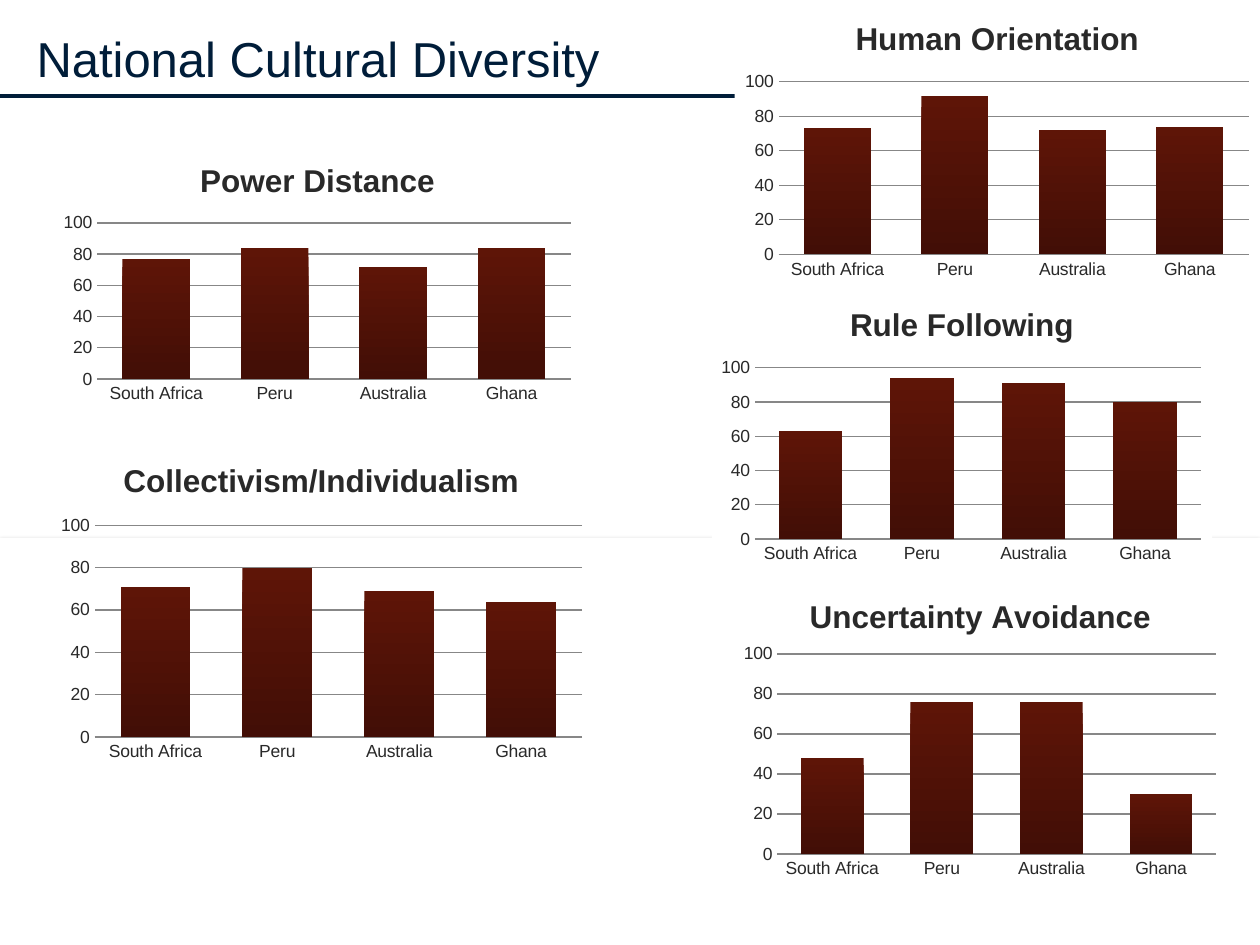
from dataclasses import dataclass

from lxml import etree
from pptx import Presentation
from pptx.chart.data import CategoryChartData
from pptx.dml.color import RGBColor
from pptx.enum.chart import XL_CHART_TYPE, XL_TICK_MARK
from pptx.enum.shapes import MSO_CONNECTOR, MSO_SHAPE
from pptx.enum.text import MSO_ANCHOR
from pptx.oxml import parse_xml
from pptx.oxml.ns import nsdecls, qn
from pptx.util import Inches, Pt

COLUMN = XL_CHART_TYPE.COLUMN_CLUSTERED
NO_TICK = XL_TICK_MARK.NONE
STRAIGHT = MSO_CONNECTOR.STRAIGHT
RECTANGLE = MSO_SHAPE.RECTANGLE
BOTTOM = MSO_ANCHOR.BOTTOM

COUNTRIES = ("South Africa", "Peru", "Australia", "Ghana")


@dataclass(frozen=True)
class Theme:
    font: str = "Arial"
    navy: RGBColor = RGBColor(0x00, 0x1D, 0x39)
    text: RGBColor = RGBColor(0x29, 0x29, 0x29)
    grid: RGBColor = RGBColor(0x87, 0x87, 0x87)
    white: RGBColor = RGBColor(0xFF, 0xFF, 0xFF)
    bar_top: RGBColor = RGBColor(0x5E, 0x15, 0x07)
    bar_bottom: RGBColor = RGBColor(0x42, 0x0E, 0x06)
    title_size: Pt = Pt(28)
    chart_title_size: Pt = Pt(18)
    label_size: Pt = Pt(10)


@dataclass(frozen=True)
class Box:
    left: float
    top: float
    width: float
    height: float

    def emu(self) -> tuple:
        return tuple(Inches(v) for v in (self.left, self.top, self.width, self.height))


@dataclass(frozen=True)
class CultureChart:
    title: str
    values: tuple
    frame: Box
    plot: Box
    opaque: bool = True


THEME = Theme()
CHARTS = (
    CultureChart("Power Distance", (77, 84, 72, 84),
                 Box(0.42, 1.13, 4.2, 2.12), Box(0.77, 1.77, 3.76, 1.24), False),
    CultureChart("Human Orientation", (73, 92, 72, 74),
                 Box(5.83, 0, 4.17, 2.27), Box(6.18, 0.65, 3.73, 1.37)),
    CultureChart("Collectivism/Individualism", (71, 80, 69, 64),
                 Box(0.4, 3.5, 4.3, 2.59), Box(0.75, 4.17, 3.87, 1.68), False),
    CultureChart("Rule Following", (63, 94, 91, 80),
                 Box(5.65, 2.27, 3.97, 2.25), Box(5.99, 2.92, 3.54, 1.36)),
    CultureChart("Uncertainty Avoidance", (48, 76, 76, 30),
                 Box(5.83, 4.58, 3.9, 2.44), Box(6.17, 5.19, 3.48, 1.59)),
)


def set_format(target, **values) -> None:
    for name, value in values.items():
        setattr(target, name, value)


def set_font(font, size, color: RGBColor, bold: bool = False) -> None:
    set_format(font, name=THEME.font, size=size, bold=bold)
    font.color.rgb = color


def add_rule(slide) -> None:
    line = slide.shapes.add_connector(STRAIGHT, 0, Inches(0.76), Inches(10), Inches(0.76))
    line.line.color.rgb = THEME.navy
    line.line.width = Pt(2.25)
    etree.SubElement(line._element.spPr, qn("a:effectLst"))


def add_panel(slide) -> None:
    """White lower panel with a soft shadow along its edge."""
    sp = slide.shapes.add_shape(RECTANGLE, *Box(0, 4.27, 10, 3.23).emu())
    sp.fill.solid()
    sp.fill.fore_color.rgb = THEME.white
    sp.line.fill.background()
    sp._element.spPr.append(parse_xml(
        f'<a:effectLst {nsdecls("a")}><a:outerShdw blurRad="{Pt(3.1)}" dist="{Pt(1.8)}" '
        'dir="5400000" rotWithShape="0"><a:srgbClr val="000000"><a:alpha val="35000"/>'
        '</a:srgbClr></a:outerShdw></a:effectLst>'))


def add_title(slide, text: str) -> None:
    tf = slide.shapes.add_textbox(*Box(0, 0, 10, 0.74).emu()).text_frame
    set_format(tf, word_wrap=True, vertical_anchor=BOTTOM, margin_left=Inches(0.29),
               margin_right=Inches(0.1), margin_top=Inches(0.24), margin_bottom=Inches(0.05))
    r = tf.paragraphs[0].add_run()
    r.text = text
    set_font(r.font, THEME.title_size, THEME.navy)


def place_plot(chart, frame: Box, plot: Box) -> None:
    """Fix the inner plot area as fractions of the chart frame."""
    area = chart._chartSpace.chart.plotArea
    for old in area.findall(qn("c:layout")):
        area.remove(old)
    layout = etree.Element(qn("c:layout"))
    manual = etree.SubElement(layout, qn("c:manualLayout"))
    parts = {
        "layoutTarget": "inner", "xMode": "edge", "yMode": "edge",
        "x": (plot.left - frame.left) / frame.width,
        "y": (plot.top - frame.top) / frame.height,
        "w": plot.width / frame.width,
        "h": plot.height / frame.height,
    }
    for tag, value in parts.items():
        etree.SubElement(manual, qn(f"c:{tag}")).set("val", str(value))
    area.insert(0, layout)


def fill_frame(chart, opaque: bool) -> None:
    fill = (f'<a:solidFill><a:srgbClr val="{THEME.white}"/></a:solidFill>'
            if opaque else "<a:noFill/>")
    chart._chartSpace.chart.addnext(parse_xml(
        f'<c:spPr {nsdecls("c", "a")}>{fill}<a:ln><a:noFill/></a:ln></c:spPr>'))


def style_axes(chart) -> None:
    val, cat = chart.value_axis, chart.category_axis
    set_format(val, minimum_scale=0, maximum_scale=100, major_unit=20,
               has_major_gridlines=True)
    for axis in (val, cat):
        set_format(axis, major_tick_mark=NO_TICK, minor_tick_mark=NO_TICK)
    for line in (val.major_gridlines.format.line, cat.format.line):
        line.color.rgb = THEME.grid
        line.width = Pt(0.75)
    val.format.line.fill.background()


def add_culture_chart(slide, item: CultureChart) -> None:
    data = CategoryChartData()
    data.categories = COUNTRIES
    data.add_series("Series 1", item.values)
    chart = slide.shapes.add_chart(COLUMN, *item.frame.emu(), data).chart
    set_format(chart, has_legend=False, has_title=True)
    set_font(chart.font, THEME.label_size, THEME.text)

    p = chart.chart_title.text_frame.paragraphs[0]
    r = p.add_run()
    r.text = item.title
    set_font(r.font, THEME.chart_title_size, THEME.text, bold=True)
    chart.chart_title.include_in_layout = False

    style_axes(chart)
    bars = chart.plots[0]
    set_format(bars, gap_width=75, overlap=-25, vary_by_categories=False)
    fill = bars.series[0].format.fill
    fill.gradient()
    fill.gradient_angle = 270
    for stop, color in zip(fill.gradient_stops, (THEME.bar_top, THEME.bar_bottom)):
        stop.color.rgb = color
    place_plot(chart, item.frame, item.plot)
    fill_frame(chart, item.opaque)


def main() -> None:
    prs = Presentation()
    set_format(prs, slide_width=Inches(10), slide_height=Inches(7.5))
    slide = prs.slides.add_slide(prs.slide_layouts[6])
    add_rule(slide)
    add_panel(slide)
    add_title(slide, "National Cultural Diversity")
    for item in CHARTS:
        add_culture_chart(slide, item)
    prs.save("out.pptx")


if __name__ == "__main__":
    main()
